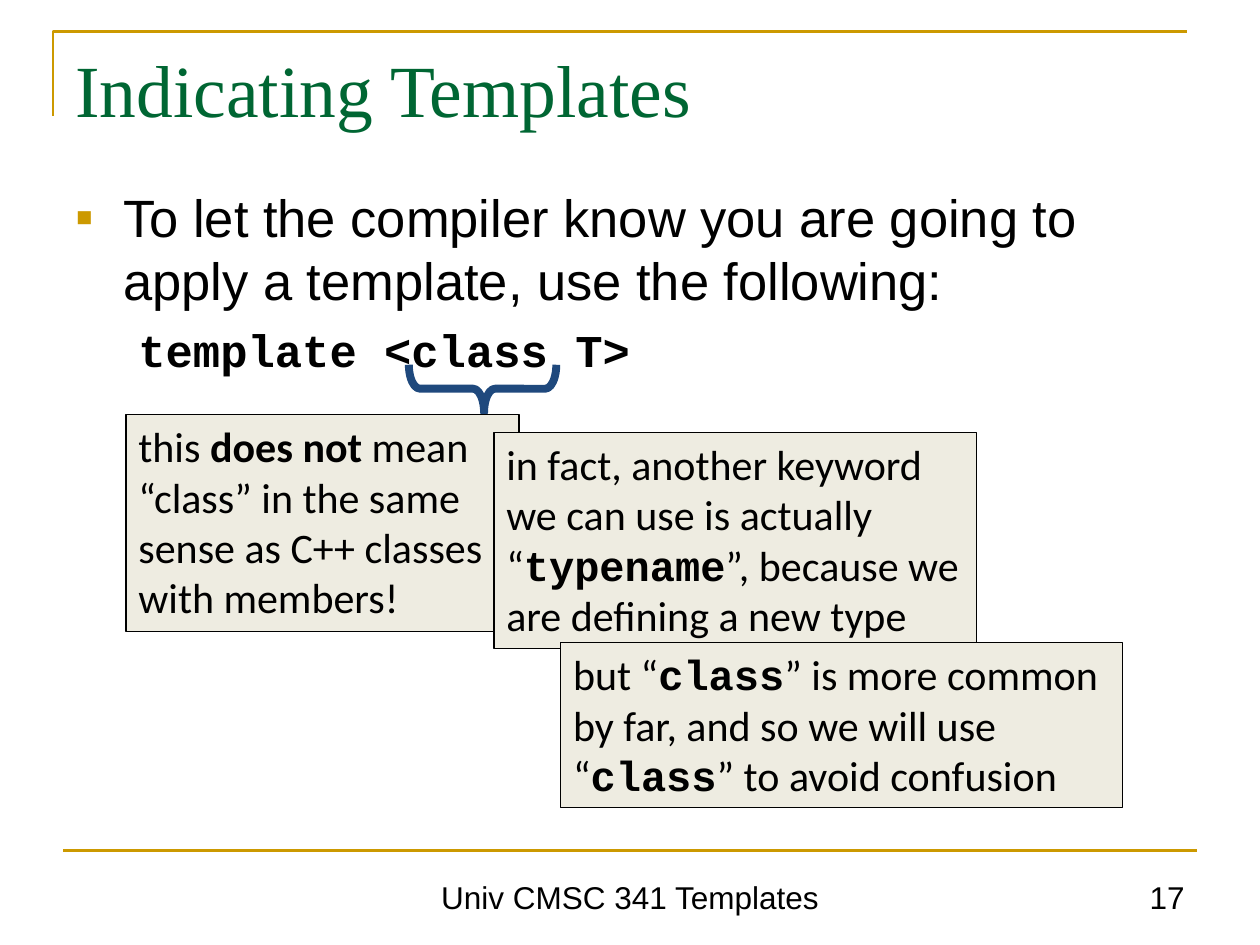
import pptx
import pptx.util
import pptx.dml.color
import pptx.enum.shapes
import pptx.enum.text
import pptx.oxml.ns
import lxml.etree

SCALE = 9144
SHAPES = pptx.enum.shapes.MSO_SHAPE
ALIGN = pptx.enum.text.PP_ALIGN
ANCHOR = pptx.enum.text.MSO_ANCHOR
GOLD, GREEN, NAVY, CREAM, BLACK = "CC9900", "006633", "1F497D", "EEECE1", "000000"
PLAIN = {"name": "Calibri", "size": 24, "bold": False}
STRONG = {**PLAIN, "bold": True}
CODE = {"name": "Courier New", "size": 24, "bold": True}
FOOTER = {"name": "Arial", "size": 18}


def px(length):
    """Turn a length in px, 100 to the inch, into EMU."""
    return pptx.util.Emu(length * SCALE)


def color(value):
    """Turn a hex string into a colour."""
    return pptx.dml.color.RGBColor.from_string(value)


def set_line(shape, value, width):
    """Give a shape or connector a solid line."""
    shape.line.color.rgb = color(value)
    shape.line.width = pptx.util.Pt(width)


def add_runs(paragraph, runs, value=BLACK):
    """Add (text, format) runs to a paragraph."""
    for text, formats in runs:
        run = paragraph.add_run()
        run.text = text
        run.font.color.rgb = color(value)
        for name, setting in formats.items():
            setattr(run.font, name, pptx.util.Pt(setting) if name == "size" else setting)


def add_text_box(slide, box, anchor=ANCHOR.TOP):
    """Add a wrapping text box and return its text frame."""
    frame = slide.shapes.add_textbox(*map(px, box)).text_frame
    frame.word_wrap = True
    frame.vertical_anchor = anchor
    return frame


def set_indent(paragraph, left, first, bullet=None):
    """Set the indents of a paragraph and its gold bullet, if any."""
    properties = paragraph._p.get_or_add_pPr()
    properties.set("marL", str(px(left)))
    properties.set("indent", str(px(first)))
    if bullet:
        qn = pptx.oxml.ns.qn
        bullet_color = lxml.etree.SubElement(properties, qn("a:buClr"))
        lxml.etree.SubElement(bullet_color, qn("a:srgbClr"), val=GOLD)
        lxml.etree.SubElement(properties, qn("a:buFont"), typeface="Arial")
        lxml.etree.SubElement(properties, qn("a:buChar"), char=bullet)


def add_frame(slide, box):
    """Draw the gold corner at the top and the gold rule above the footer."""
    left, top, width, height = box
    builder = slide.shapes.build_freeform(px(left), px(top + 67))
    builder.add_line_segments(
        [(px(left), px(top)), (px(left + width), px(top))], close=False)
    corner = builder.convert_to_shape()
    corner.shadow.inherit = False
    corner.fill.background()
    rule = slide.shapes.add_connector(
        pptx.enum.shapes.MSO_CONNECTOR.STRAIGHT,
        px(left + 8), px(top + height), px(left + 8 + width), px(top + height))
    lxml.etree.SubElement(rule._element.spPr, pptx.oxml.ns.qn("a:effectLst"))
    for line in (corner, rule):
        set_line(line, GOLD, 1.5)


def add_title(slide, box):
    """Write the title."""
    paragraph = add_text_box(slide, box).paragraphs[0]
    add_runs(paragraph, [("Indicating Templates", {"name": "Times New Roman", "size": 42})], GREEN)


def add_body(slide, box):
    """Write the bullet and the code line, with a brace under the keyword."""
    left, top = box[:2]
    frame = add_text_box(slide, box)
    bullet, code = frame.paragraphs[0], frame.add_paragraph()
    add_runs(bullet, [(
        "To let the compiler know you are going to apply a template, use the following:",
        {"name": "Arial", "size": 30})])
    bullet.space_before = pptx.util.Pt(7.5)
    set_indent(bullet, 38, -38, "▪")
    add_runs(code, [("template <class T>", {**CODE, "size": 26})])
    code.level = 1
    code.space_before = pptx.util.Pt(6.5)
    set_indent(code, 50, 0)
    brace = slide.shapes.add_shape(
        SHAPES.RIGHT_BRACE, px(left + 314), px(top + 108), px(38), px(117))
    brace.rotation = 90
    brace.adjustments[0], brace.adjustments[1] = 0.23, 0.49
    brace.shadow.inherit = False
    brace.fill.background()
    set_line(brace, NAVY, 4.5)


def add_note(slide, box, runs):
    """Add a cream note that grows with its text."""
    note = slide.shapes.add_shape(SHAPES.RECTANGLE, *map(px, box))
    note.shadow.inherit = False
    note.fill.solid()
    note.fill.fore_color.rgb = color(CREAM)
    set_line(note, BLACK, 0.75)
    frame = note.text_frame
    frame.word_wrap = True
    frame.auto_size = pptx.enum.text.MSO_AUTO_SIZE.SHAPE_TO_FIT_TEXT
    frame.vertical_anchor = ANCHOR.TOP
    frame.paragraphs[0].alignment = ALIGN.LEFT
    add_runs(frame.paragraphs[0], runs)


def add_footer(slide, box):
    """Write the course name in the middle and the page number at the right."""
    left, top, width, height = box
    parts = [
        ("Univ CMSC 341 Templates", left + 125, 650, ALIGN.CENTER),
        ("17", left + width - 233, 233, ALIGN.RIGHT),
    ]
    for text, start, part_width, alignment in parts:
        frame = add_text_box(slide, (start, top, part_width, height), ANCHOR.BOTTOM)
        frame.paragraphs[0].alignment = alignment
        add_runs(frame.paragraphs[0], [(text, FOOTER)])


def main():
    """Build the slide and save it."""
    presentation = pptx.Presentation()
    presentation.slide_width, presentation.slide_height = px(1000), px(750)
    slide = presentation.slides.add_slide(presentation.slide_layouts[6])
    add_frame(slide, (42, 25, 900, 650))
    add_title(slide, (50, 30, 899, 111))
    add_body(slide, (50, 142, 899, 528))
    add_footer(slide, (50, 683, 900, 49))
    notes = [
        ((100, 329, 312, 172), [
            ("this ", PLAIN), ("does not ", STRONG),
            ("mean “class” in the same sense as C++ classes with members!", PLAIN)]),
        ((392, 343, 383, 172), [
            ("in fact, another keyword we can use is actually “", PLAIN),
            ("typename", CODE), ("”, because we are defining a new type", PLAIN)]),
        ((445, 510, 446, 131), [
            ("but “", PLAIN), ("class", CODE),
            ("” is more common by far, and so we will use “", PLAIN),
            ("class", CODE), ("” to avoid confusion", PLAIN)]),
    ]
    for box, runs in notes:
        add_note(slide, box, runs)
    presentation.save("out.pptx")


if __name__ == "__main__":
    main()
